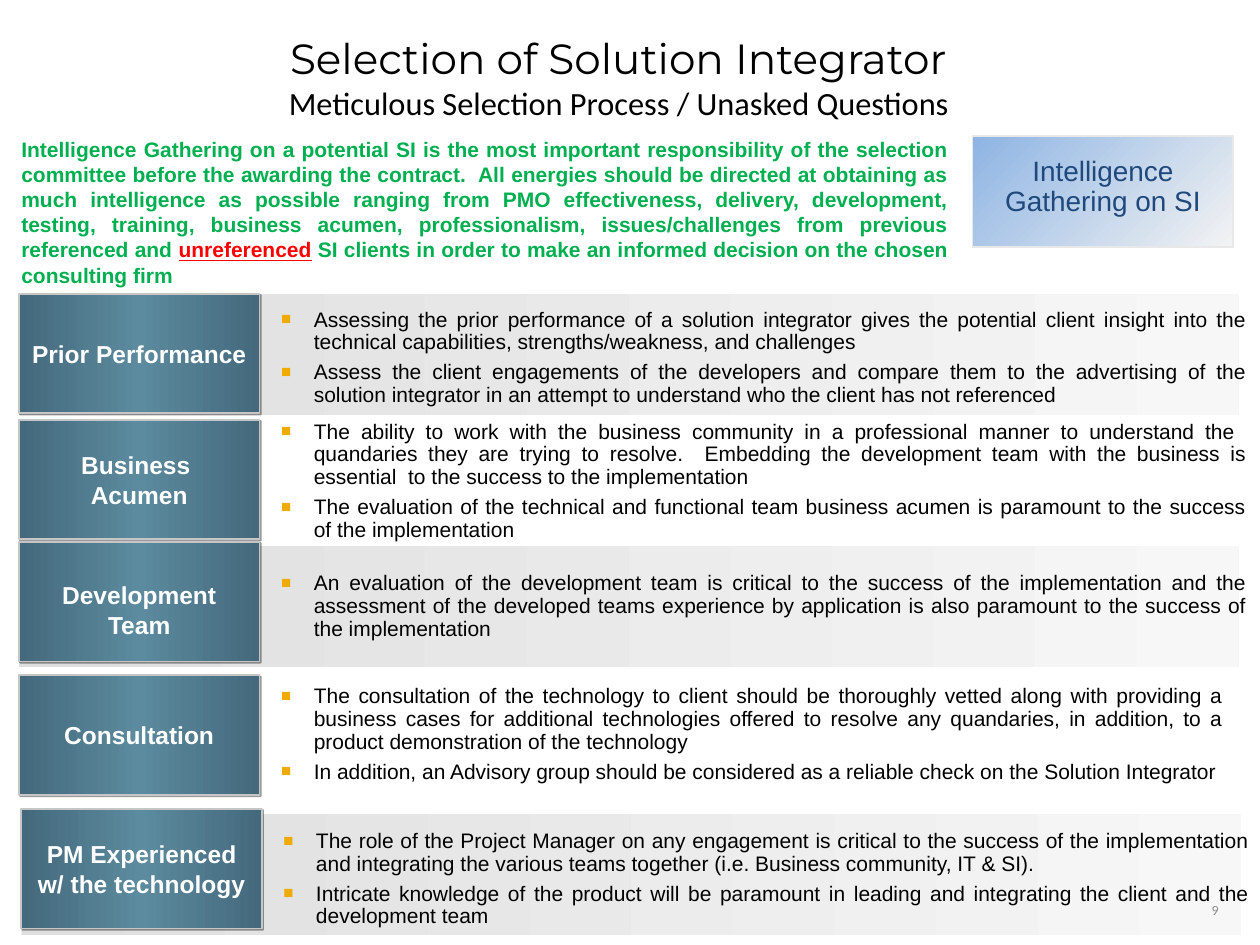
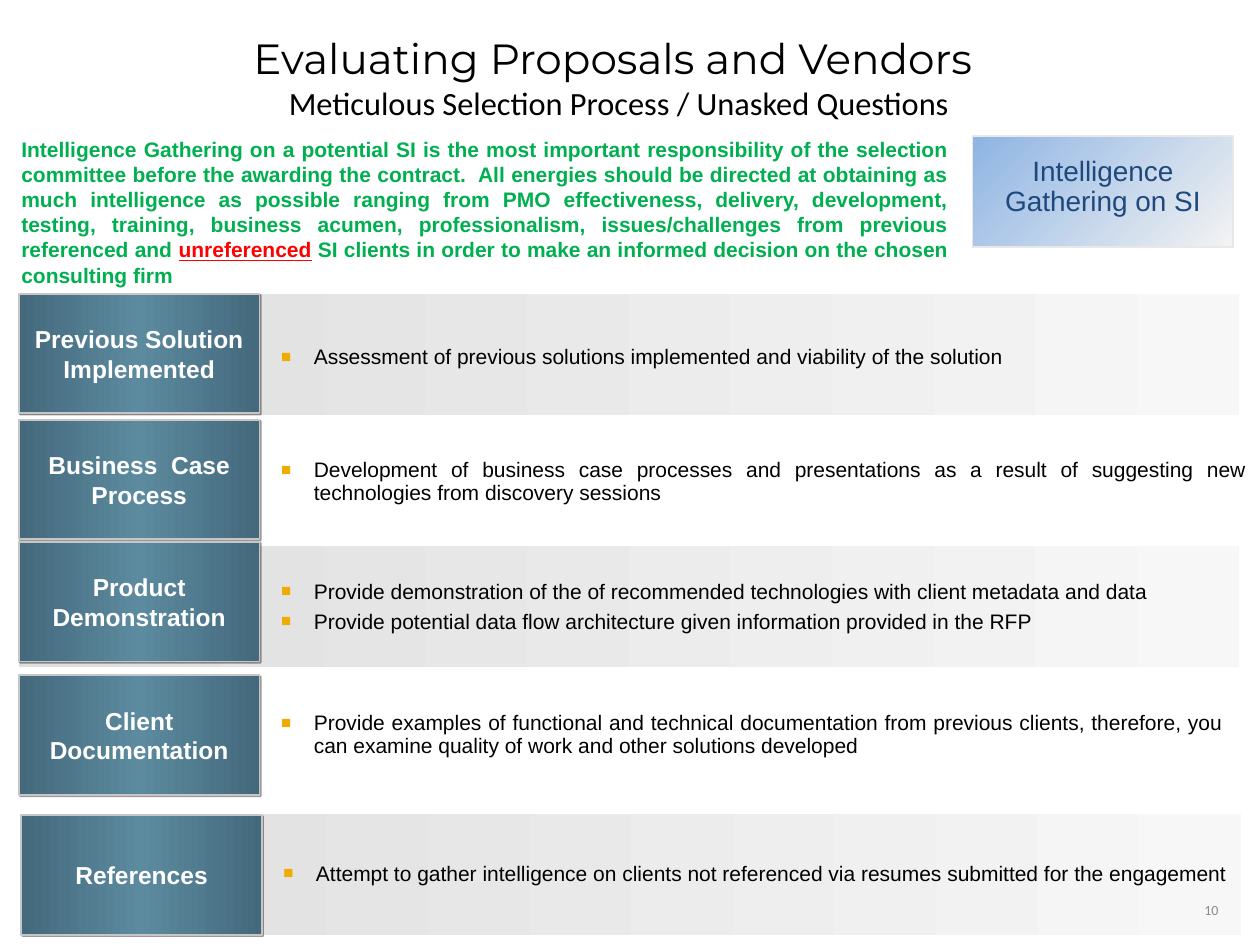
import dataclasses
import pptx
import pptx.dml.color
import pptx.enum.shapes
import pptx.enum.text
import pptx.oxml
import pptx.oxml.ns
import pptx.util

Pt = pptx.util.Pt
qn = pptx.oxml.ns.qn
Shape = pptx.enum.shapes.MSO_SHAPE
Align = pptx.enum.text.PP_ALIGN
Anchor = pptx.enum.text.MSO_ANCHOR
NS = pptx.oxml.ns.nsdecls("a")


@dataclasses.dataclass(frozen=True)
class Theme:
    # Fonts and type sizes
    head: str = "Montserrat"
    sub: str = "Calibri"
    text: str = "Arial"
    head_size: float = 24.1
    sub_size: float = 18.5
    body_size: float = 12
    label_size: float = 14
    badge_size: float = 16
    page_size: float = 8
    # Colours; each blend is a list of (percent, colour)
    ink: str = "000000"
    white: str = "FFFFFF"
    green: str = "00B050"
    red: str = "FF0000"
    navy: str = "1F497D"
    grey: str = "8C8C8C"
    gold: str = "F0AB00"
    badge_line: str = "E8E8E8"
    label_line: str = "C6C6C6"
    badge: tuple = ((0, "8EB4E3"), (100, "F3F3F3"))
    band: tuple = ((0, "DEDEDE"), (100, "F7F7F7"))
    label: tuple = ((0, "44697D"), (50, "5C8A9E"), (100, "44697D"))


T = Theme()


@dataclasses.dataclass
class Row:
    name: str
    top: float        # list top, relative to the row
    height: float     # list height
    points: tuple
    shift: float = 0  # label offset from the row top
    drop: float = 0   # extra space above the label text
    trim: float = 0   # cut from the list width


# Left, top and band flag of the five rows
GRID = [(10.8, 167.8, True), (10.8, 239.8, False), (10.8, 311.8, True),
        (10.8, 385.9, False), (12.2, 465.1, True)]

INTRO = [
    ("Intelligence Gathering on a potential SI is the most important responsibility of the "
     "selection committee before the awarding the contract.  All energies should be directed at "
     "obtaining as much intelligence as possible ranging from PMO effectiveness, delivery, "
     "development, testing, training, business acumen, professionalism, issues/challenges from "
     "previous referenced and ", T.green, False),
    ("unreferenced", T.red, True),
    (" SI clients in order to make an informed decision on the chosen consulting firm",
     T.green, False),
]

SLIDES = [
    ("Selection of Solution Integrator", "9", [
        Row("Prior Performance", -2.9, 79.2, (
            "Assessing the prior performance of a solution integrator gives the potential client "
            "insight into the technical capabilities, strengths/weakness, and challenges",
            "Assess the client engagements of the developers and compare them to the advertising "
            "of the solution integrator in an attempt to understand who the client has not "
            "referenced")),
        Row("Business  Acumen", -10.8, 92.2, (
            "The ability to work with the business community in a professional manner to "
            "understand the  quandaries they are trying to resolve.  Embedding the development "
            "team with the business is essential  to the success to the implementation",
            "The evaluation of the technical and functional team business acumen is paramount to "
            "the success of the implementation")),
        Row("Development Team", 4.3, 61.2, (
            "An evaluation of the development team is critical to the success of the "
            "implementation and the assessment of the developed teams experience by application "
            "is also paramount to the success of the implementation",), shift=-2.2, drop=9),
        Row("Consultation", -5.7, 79.2, (
            "The consultation of the technology to client should be thoroughly vetted along with "
            "providing a business cases for additional technologies offered to resolve any "
            "quandaries, in addition, to a product demonstration of the technology",
            "In addition, an Advisory group should be considered as a reliable check on the "
            "Solution Integrator"), trim=13.6),
        Row("PM Experienced w/ the technology", -4.3, 83.5, (
            "The role of the Project Manager on any engagement is critical to the success of the "
            "implementation and integrating the various teams together (i.e. Business community, "
            "IT & SI).",
            "Intricate knowledge of the product will be paramount in leading and integrating the "
            "client and the development team"), shift=-2.9),
    ]),
    ("Evaluating Proposals and Vendors ", "10", [
        Row("Previous Solution Implemented", 19.4, 34.6, (
            "Assessment of previous solutions implemented and viability of the solution",)),
        Row("Business  Case Process", 11.5, 48.2, (
            "Development of business case processes and presentations as a result of suggesting "
            "new technologies from discovery sessions",)),
        Row("Product Demonstration", 8.6, 53.3, (
            "Provide demonstration of the of recommended technologies with client metadata and "
            "data",
            "Provide potential data flow architecture given information provided in the RFP"),
            shift=-2.2),
        Row("Client Documentation", 10.1, 48.2, (
            "Provide examples of functional and technical documentation from previous clients, "
            "therefore, you can examine quality of work and other solutions developed",),
            trim=13.6),
        Row("References", 17.3, 34.6, (
            "Attempt to gather intelligence on clients not referenced via resumes submitted for "
            "the engagement",), shift=0.7),
    ]),
]


# Shared helpers
def rgb(code):
    return pptx.dml.color.RGBColor.from_string(code)


def put(shape, box):
    shape.left, shape.top, shape.width, shape.height = (Pt(v) for v in box)


def frame(shape, anchor=Anchor.MIDDLE, pad=(7.2, 3.6, 7.2, 3.6), wrap=True):
    tf = shape.text_frame
    tf.auto_size = pptx.enum.text.MSO_AUTO_SIZE.NONE
    tf.word_wrap = wrap
    tf.vertical_anchor = anchor
    tf.margin_left, tf.margin_top, tf.margin_right, tf.margin_bottom = (Pt(v) for v in pad)
    return tf


def para(tf, n, align):
    p = tf.add_paragraph() if n else tf.paragraphs[0]
    p.alignment = align
    return p


def write(p, text, size, color, font=T.text, bold=False, under=False):
    run = p.add_run()
    run.text = text
    run.font.name, run.font.size = font, Pt(size)
    run.font.bold, run.font.underline = bold, under
    run.font.color.rgb = rgb(color)


def textbox(slide, box):
    return slide.shapes.add_textbox(*(Pt(v) for v in box))


def panel(slide, kind, box, blend, angle=0, line=None):
    shape = slide.shapes.add_shape(kind, *(Pt(v) for v in box))
    if kind == Shape.ROUNDED_RECTANGLE:
        shape.adjustments[0] = 0
    shape.shadow.inherit = False
    shape.fill.gradient()
    stops = shape.element.find(".//" + qn("a:gsLst"))
    for stop in list(stops):
        stops.remove(stop)
    for spot, color in blend:
        stops.append(pptx.oxml.parse_xml(
            f'<a:gs {NS} pos="{spot * 1000}"><a:srgbClr val="{color}"/></a:gs>'))
    shape.element.find(".//" + qn("a:lin")).set("ang", str(angle * 60000))
    if line:
        shape.line.color.rgb = rgb(line)
        shape.line.width = Pt(1)
    else:
        shape.line.fill.background()
    return shape


def bullet(p):
    props = p._p.get_or_add_pPr()
    props.set("marL", str(Pt(18.7)))
    props.set("indent", str(-Pt(18.7)))
    for mark in (f'<a:buClr {NS}><a:srgbClr val="{T.gold}"/></a:buClr>',
                 f'<a:buSzPct {NS} val="80000"/>',
                 f'<a:buFont {NS} typeface="{T.text}"/>',
                 f'<a:buChar {NS} char="■"/>'):
        props.append(pptx.oxml.parse_xml(mark))


# Title with subtitle
def title(slide, text, box):
    shape = slide.shapes.title
    put(shape, box)
    p = para(frame(shape), 0, Align.CENTER)
    write(p, text, T.head_size, T.ink, T.head)
    p.add_line_break()
    write(p, "Meticulous Selection Process / Unasked Questions", T.sub_size, T.ink, T.sub)


# Green opening paragraph
def intro(slide, box):
    p = para(frame(textbox(slide, box), Anchor.TOP, (0, 0, 0, 0)), 0, Align.JUSTIFY)
    for text, color, under in INTRO:
        write(p, text, T.body_size, color, bold=True, under=under)


# Blue badge at the top right
def badge(slide, box):
    left, top, width, height = box
    panel(slide, Shape.ROUNDED_RECTANGLE, box, T.badge, 45, T.badge_line)
    tf = frame(textbox(slide, (left + 10.8, top + 8.6, width - 21.6, height - 20.9)),
               Anchor.TOP, wrap=False)
    for n, text in enumerate(("Intelligence", "Gathering on SI")):
        p = para(tf, n, Align.CENTER)
        p.line_spacing = 0.9
        write(p, text, T.badge_size, T.navy)


# Bullet list of a row
def points(shape, row, box):
    put(shape, box)
    tf = frame(shape, pad=(7.2, 10.8, 7.2, 10.8))
    for n, text in enumerate(row.points):
        p = para(tf, n, Align.JUSTIFY)
        p.line_spacing = 0.9
        p.space_before = Pt(4.2 if n else 0)
        bullet(p)
        write(p, text, T.body_size, T.ink)


# Teal label of a row
def label(slide, row, box):
    shape = panel(slide, Shape.RECTANGLE, box, T.label, line=T.label_line)
    shape.element.find(".//" + qn("a:effectLst")).append(pptx.oxml.parse_xml(
        f'<a:outerShdw {NS} blurRad="0" dist="{Pt(1)}" dir="2700000" algn="tl" '
        f'rotWithShape="0"><a:srgbClr val="{T.ink}"><a:alpha val="40000"/></a:srgbClr>'
        '</a:outerShdw>'))
    tf = frame(shape, pad=(7.2, 7.2 + row.drop, 7.2, 7.2))
    write(para(tf, 0, Align.CENTER), row.name, T.label_size, T.white, bold=True)


# One row: band, list, label
def strip(slide, row, slot, left, top, shaded):
    if shaded:
        panel(slide, Shape.ROUNDED_RECTANGLE, (left, top, 697, 69.1), T.band)
    box = (left + 142.6, top + row.top, 566.6 - row.trim, row.height)
    shape = slot or textbox(slide, box)
    shape.element.getparent().append(shape.element)  # bring the list above its band
    points(shape, row, box)
    label(slide, row, (left, top + row.shift, 137.5, 68.4))


# Page number
def page(slide, number, box):
    p = para(frame(textbox(slide, box)), 0, Align.RIGHT)
    write(p, number, T.page_size, T.grey, T.sub)


def build(deck, head, number, rows):
    slide = deck.slides.add_slide(deck.slide_layouts.get_by_name("Comparison"))
    # Four body placeholders; the fifth list gets a text box
    slots = iter([s for s in slide.placeholders if s.placeholder_format.idx])
    title(slide, head, (71.3, 15.8, 564.5, 56.2))
    badge(slide, (555.8, 77.8, 149, 63.4))
    intro(slide, (12.2, 77.8, 530, 32.4))
    for row, place in zip(rows, GRID):
        strip(slide, row, next(slots, None), *place)
    page(slide, number, (535.7, 514.1, 167.8, 11.5))


def main():
    deck = pptx.Presentation()
    deck.slide_width, deck.slide_height = Pt(720), Pt(540)
    for head, number, rows in SLIDES:
        build(deck, head, number, rows)
    deck.save("out.pptx")


if __name__ == "__main__":
    main()
